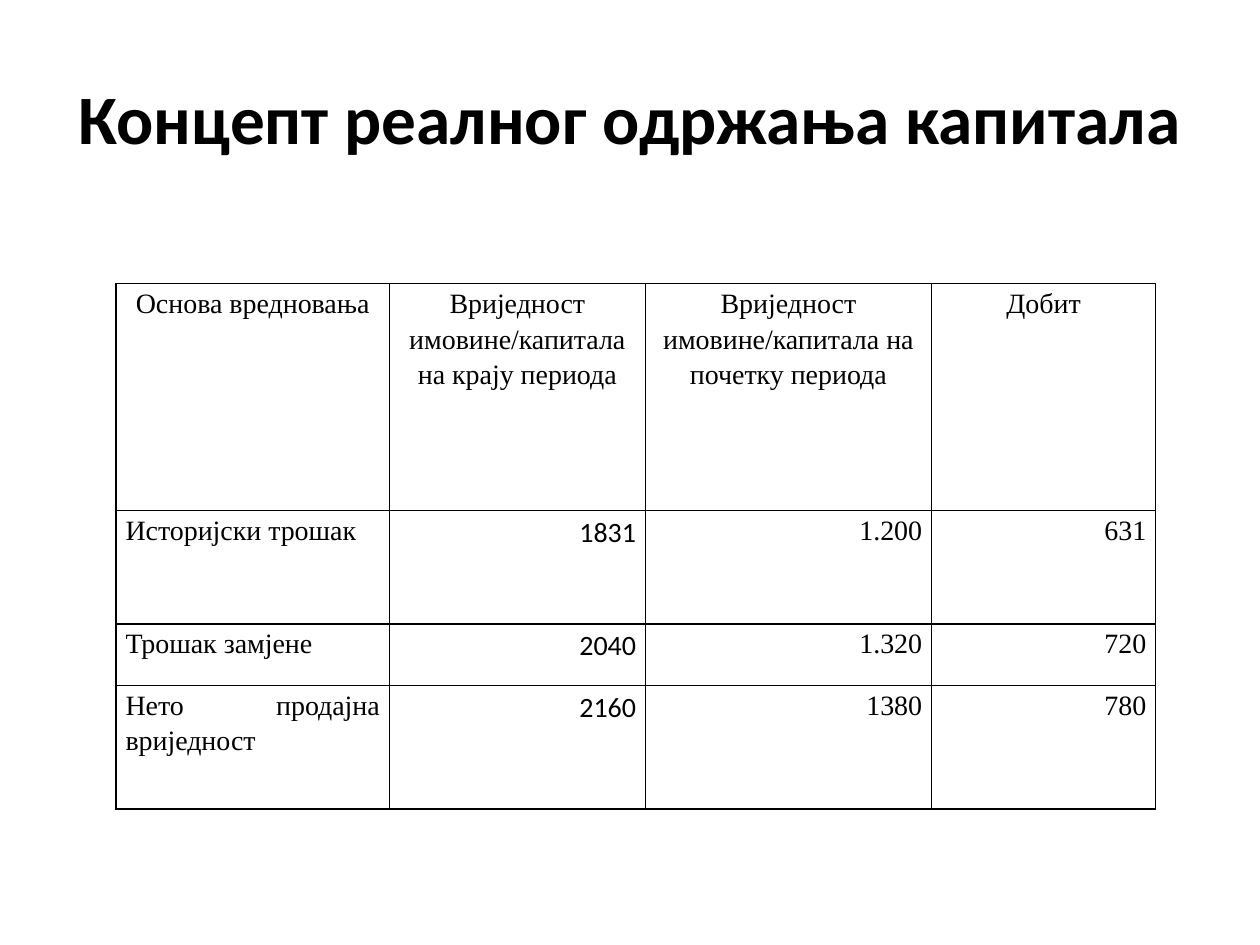
from lxml import etree
from pptx import Presentation
from pptx.dml.color import RGBColor
from pptx.enum.text import MSO_ANCHOR, PP_ALIGN
from pptx.oxml.ns import qn
from pptx.util import Cm, Pt

CENTER, RIGHT, JUSTIFY = PP_ALIGN.CENTER, PP_ALIGN.RIGHT, PP_ALIGN.JUSTIFY
TOP, MIDDLE = MSO_ANCHOR.TOP, MSO_ANCHOR.MIDDLE

# Content
TITLE = "Концепт реалног одржања капитала"
ROWS = [
    ("Основа вредновања", "Вриједност имовине/капитала на крају периода",
     "Вриједност имовине/капитала на почетку периода", "Добит"),
    ("Историјски трошак", "1831", "1.200", "631"),
    ("Трошак замјене", "2040", "1.320", "720"),
    ("Нето продајна вриједност", "2160", "1380", "780"),
]

# Layout and formats
COLORS = {"text": "000000", "border": "000000", "background": "FFFFFF"}
COLUMN_WIDTHS = (5.51, 5.16, 5.77, 4.52)
ROW_HEIGHTS = (4.57, 2.29, 1.24, 2.49)
TITLE_BOX = {"left": Cm(1.27), "top": Cm(0.76), "width": Cm(22.86), "height": Cm(3.18)}
TITLE_FONT = {"name": "Calibri", "size": Pt(39.6), "bold": True}
CELL_FONT = {"name": "Times New Roman", "size": Pt(16), "bold": False}
END_VALUE_FONT = {**CELL_FONT, "name": "Calibri"}
CELL_FORMAT = {"margin_left": Cm(0.19), "margin_right": Cm(0.19),
               "margin_top": 0, "margin_bottom": 0, "vertical_anchor": TOP}
PARAGRAPH_FORMAT = {"line_spacing": 1.15, "space_before": Pt(0), "space_after": Pt(6)}
PLAIN_TABLE = {"first_row": False, "horz_banding": False}


def apply(target, values):
    for name, value in values.items():
        setattr(target, name, value)


def format_font(font, values):
    apply(font, values)
    font.color.rgb = RGBColor.from_string(COLORS["text"])


def add_borders(cell):
    properties = cell._tc.get_or_add_tcPr()
    for side in ("lnL", "lnR", "lnT", "lnB"):
        line = etree.SubElement(properties, qn(f"a:{side}"), w=str(Pt(1)))
        fill = etree.SubElement(line, qn("a:solidFill"))
        etree.SubElement(fill, qn("a:srgbClr"), val=COLORS["border"])


def fill_cell(cell, text, alignment, font_values):
    add_borders(cell)
    cell.fill.background()
    apply(cell, CELL_FORMAT)
    cell.text = text
    paragraph = cell.text_frame.paragraphs[0]
    apply(paragraph, {**PARAGRAPH_FORMAT, "alignment": alignment})
    format_font(paragraph.runs[0].font, font_values)


def main():
    presentation = Presentation()
    presentation.slide_width, presentation.slide_height = Cm(25.4), Cm(19.05)
    slide = presentation.slides.add_slide(presentation.slide_layouts.get_by_name("Title Only"))
    background = slide.background.fill
    background.solid()
    background.fore_color.rgb = RGBColor.from_string(COLORS["background"])

    # Title
    title = slide.shapes.title
    apply(title, TITLE_BOX)
    title.text = TITLE
    apply(title.text_frame, {"vertical_anchor": MIDDLE, "word_wrap": True})
    paragraph = title.text_frame.paragraphs[0]
    paragraph.alignment = CENTER
    format_font(paragraph.runs[0].font, TITLE_FONT)

    # Valuation table
    table = slide.shapes.add_table(
        len(ROWS), len(COLUMN_WIDTHS), Cm(2.34), Cm(5.72),
        Cm(sum(COLUMN_WIDTHS)), Cm(sum(ROW_HEIGHTS))).table
    apply(table, PLAIN_TABLE)
    for column, width in zip(table.columns, COLUMN_WIDTHS):
        column.width = Cm(width)
    for row, height in zip(table.rows, ROW_HEIGHTS):
        row.height = Cm(height)
    for row_index, texts in enumerate(ROWS):
        for column_index, text in enumerate(texts):
            is_header = row_index == 0
            alignment = CENTER if is_header else JUSTIFY if column_index == 0 else RIGHT
            is_end_value = column_index == 1 and not is_header
            fill_cell(table.cell(row_index, column_index), text, alignment,
                      END_VALUE_FONT if is_end_value else CELL_FONT)

    presentation.save("out.pptx")


if __name__ == "__main__":
    main()
